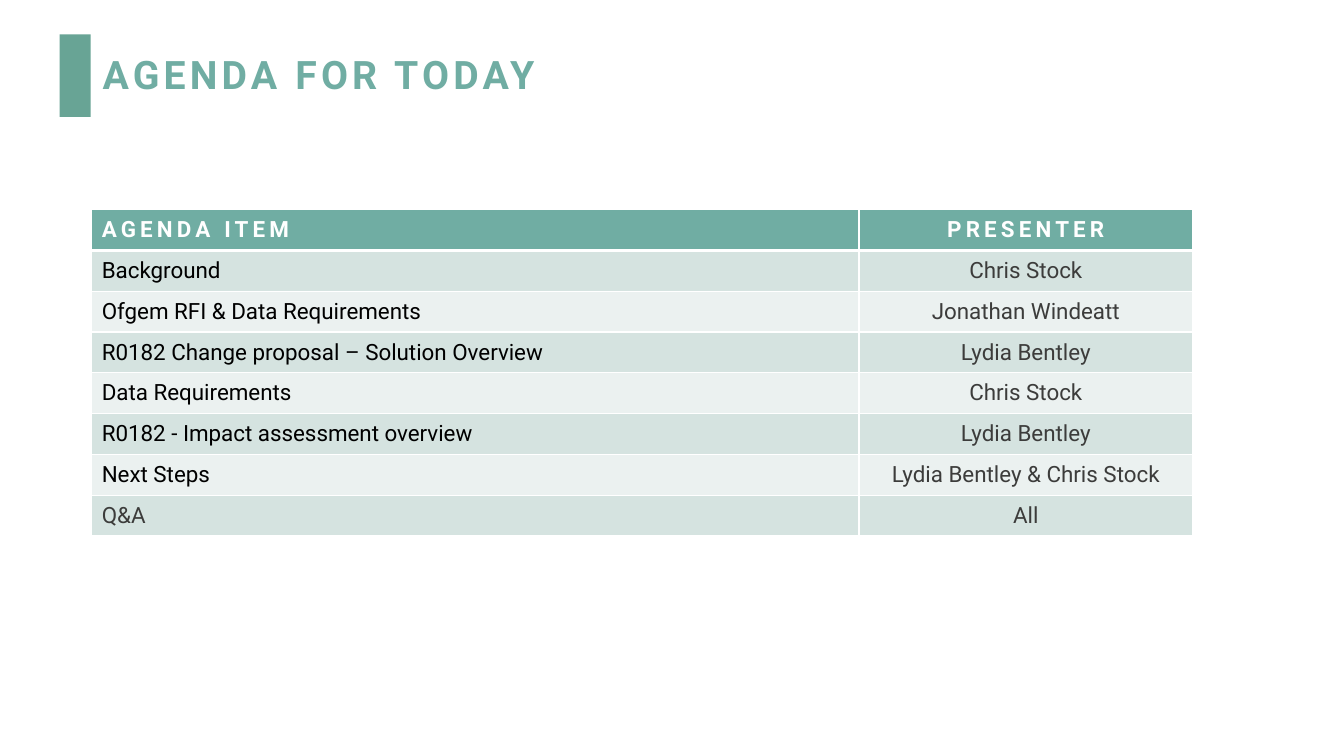
from dataclasses import dataclass

from lxml.etree import SubElement
from pptx import Presentation
from pptx.dml.color import RGBColor
from pptx.enum.shapes import MSO_SHAPE
from pptx.enum.text import MSO_ANCHOR, PP_ALIGN
from pptx.oxml.ns import qn
from pptx.util import Inches, Pt


@dataclass(frozen=True)
class Theme:
    font: str = "Roboto"
    accent: str = "68A495"
    heading: str = "70ADA3"
    white: str = "FFFFFF"
    black: str = "000000"
    grey: str = "3C3C3B"
    bands: tuple = ("D5E3E0", "EBF1F0")
    title_size: int = 28
    table_size: int = 16
    heading_spacing: int = 3
    thin_border: int = 1
    thick_border: int = 3


THEME = Theme()

HEADER = ("AGENDA ITEM", "PRESENTER")
AGENDA = [
    ("Background", "Chris Stock"),
    ("Ofgem RFI & Data Requirements", "Jonathan Windeatt"),
    ("R0182 Change proposal – Solution Overview", "Lydia Bentley"),
    ("Data Requirements", "Chris Stock"),
    ("R0182 - Impact assessment overview", "Lydia Bentley"),
    ("Next Steps", "Lydia Bentley & Chris Stock"),
    ("Q&A", "All"),
]
COLUMN_WIDTHS = (7.61, 3.31)
TABLE_HEIGHT = 3.24


def add_run(paragraph, text, size, color, heading=False):
    run = paragraph.add_run()
    run.text = text
    run.font.name = THEME.font
    run.font.size = Pt(size)
    run.font.bold = heading
    run.font.color.rgb = RGBColor.from_string(color)
    if heading:
        run.font._element.set("spc", str(THEME.heading_spacing * 100))


def add_accent_bar(slide):
    shape = slide.shapes.add_shape(
        MSO_SHAPE.RECTANGLE, Inches(0.59), Inches(0.34), Inches(0.31), Inches(0.82))
    shape.shadow.inherit = False
    shape.fill.solid()
    shape.fill.fore_color.rgb = RGBColor.from_string(THEME.accent)
    shape.line.fill.background()


def add_title(slide, text):
    shape = slide.shapes.add_textbox(
        Inches(0.92), Inches(0.4), Inches(10.15), Inches(0.72))
    text_frame = shape.text_frame
    text_frame.word_wrap = True
    text_frame.vertical_anchor = MSO_ANCHOR.MIDDLE
    paragraph = text_frame.paragraphs[0]
    paragraph.line_spacing = 0.9
    add_run(paragraph, text, THEME.title_size, THEME.heading, heading=True)


def set_borders(cell, top, bottom):
    properties = cell._tc.get_or_add_tcPr()
    widths = {"a:lnL": THEME.thin_border, "a:lnR": THEME.thin_border,
              "a:lnT": top, "a:lnB": bottom}
    for tag, width in widths.items():
        line = SubElement(properties, qn(tag), w=str(Pt(width)))
        fill = SubElement(line, qn("a:solidFill"))
        SubElement(fill, qn("a:srgbClr"), val=THEME.white)


def fill_cell(cell, text, row, column):
    is_header = row == 0
    # Borders come before the fill in the cell properties
    set_borders(cell,
                top=THEME.thick_border if row == 1 else THEME.thin_border,
                bottom=THEME.thick_border if is_header else THEME.thin_border)
    cell.fill.solid()
    background = THEME.heading if is_header else THEME.bands[(row - 1) % 2]
    cell.fill.fore_color.rgb = RGBColor.from_string(background)
    cell.vertical_anchor = MSO_ANCHOR.MIDDLE

    # The presenters and the closing item are grey, the other items black
    if is_header:
        color = THEME.white
    elif column == 1 or row == len(AGENDA):
        color = THEME.grey
    else:
        color = THEME.black
    paragraph = cell.text_frame.paragraphs[0]
    paragraph.alignment = PP_ALIGN.CENTER if column == 1 else PP_ALIGN.LEFT
    add_run(paragraph, text, THEME.table_size, color, heading=is_header)


def add_agenda_table(slide):
    rows = [HEADER, *AGENDA]
    table = slide.shapes.add_table(
        len(rows), len(HEADER), Inches(0.91), Inches(2.08),
        Inches(sum(COLUMN_WIDTHS)), Inches(TABLE_HEIGHT)).table
    for column, width in zip(table.columns, COLUMN_WIDTHS):
        column.width = Inches(width)
    for row_index, texts in enumerate(rows):
        table.rows[row_index].height = Inches(TABLE_HEIGHT / len(rows))
        for column_index, text in enumerate(texts):
            fill_cell(table.cell(row_index, column_index), text,
                      row_index, column_index)


def main():
    presentation = Presentation()
    presentation.slide_width = Inches(13.33)
    presentation.slide_height = Inches(7.5)
    slide = presentation.slides.add_slide(presentation.slide_layouts[6])

    # Heading
    add_accent_bar(slide)
    add_title(slide, "AGENDA FOR TODAY")

    # Agenda
    add_agenda_table(slide)

    presentation.save("out.pptx")


if __name__ == "__main__":
    main()
